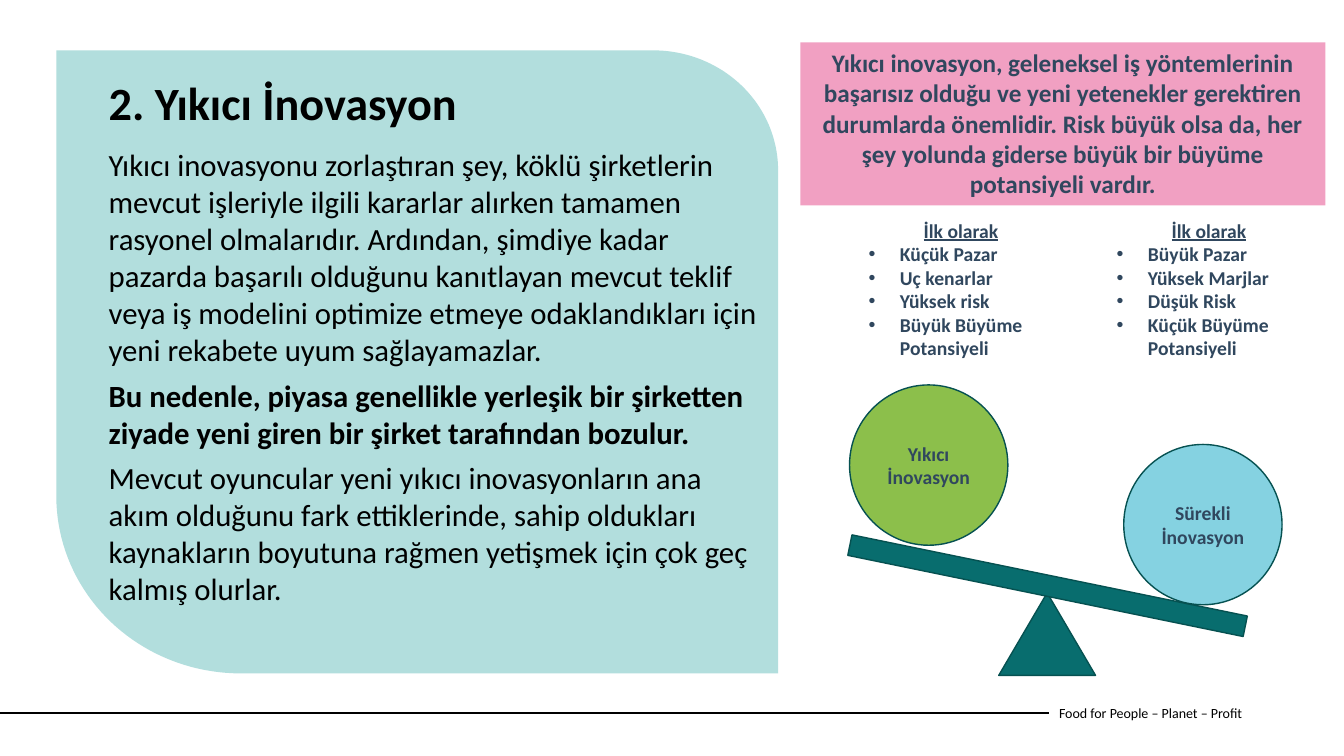
from math import cos, pi, sin

from lxml.etree import SubElement
from pptx import Presentation
from pptx.dml.color import RGBColor
from pptx.enum.shapes import MSO_CONNECTOR as Connector, MSO_SHAPE as Shape
from pptx.enum.text import MSO_ANCHOR as Anchor, PP_ALIGN as Align
from pptx.oxml.ns import qn
from pptx.util import Cm, Pt

FONT = "Calibri"
BLACK, NAVY, TEAL, TEAL_EDGE = "000000", "30475E", "086D6E", "065151"
MINT, PINK, GREEN, SKY = "B2DEDD", "F1A0C2", "8CBF4B", "85D2E1"

TITLE = "2. Yıkıcı İnovasyon"
BODY = [
    ("Yıkıcı inovasyonu zorlaştıran şey, köklü şirketlerin mevcut işleriyle ilgili "
     "kararlar alırken tamamen rasyonel olmalarıdır. Ardından, şimdiye kadar pazarda "
     "başarılı olduğunu kanıtlayan mevcut teklif veya iş modelini optimize etmeye "
     "odaklandıkları için yeni rekabete uyum sağlayamazlar.", False),
    ("Bu nedenle, piyasa genellikle yerleşik bir şirketten ziyade yeni giren bir "
     "şirket tarafından bozulur.", True),
    ("Mevcut oyuncular yeni yıkıcı inovasyonların ana akım olduğunu fark ettiklerinde, "
     "sahip oldukları kaynakların boyutuna rağmen yetişmek için çok geç kalmış "
     "olurlar.", False),
]
CALLOUT = ("Yıkıcı inovasyon, geleneksel iş yöntemlerinin başarısız olduğu ve yeni "
           "yetenekler gerektiren durumlarda önemlidir. Risk büyük olsa da, her şey "
           "yolunda giderse büyük bir büyüme potansiyeli vardır.")
LIST_HEADING = "İlk olarak"
LISTS = [
    (21.64, ["Küçük Pazar", "Uç kenarlar", "Yüksek risk", "Büyük Büyüme Potansiyeli"]),
    (27.89, ["Büyük Pazar", "Yüksek Marjlar", "Düşük Risk", "Küçük Büyüme Potansiyeli"]),
]
BALLS = [
    (21.41, 9.7, GREEN, ["Yıkıcı", "İnovasyon"]),
    (28.32, 11.2, SKY, ["Sürekli İnovasyon"]),
]
FOOTER = "Food for People – Planet – Profit"

PANEL_LEFT, PANEL_TOP, PANEL_RIGHT, PANEL_BOTTOM = 1.42, 1.27, 19.61, 16.97
LOWER_RADII, UPPER_RADII = (4.65, 4.47), (3.15, 3.02)
ARC_STEPS = 40
LIST_INDENT = 0.79
FOOTER_LEFT, FOOTER_RULE_TOP = 26.44, 17.96


def color(code):
    return RGBColor.from_string(code)


def paint(shape, fill, edge=None):
    shape.shadow.inherit = False
    shape.fill.solid()
    shape.fill.fore_color.rgb = color(fill)
    if edge:
        shape.line.color.rgb = color(edge)
        shape.line.width = Pt(1)
    else:
        shape.line.fill.background()


def add_figure(page, kind, place, fill, edge=None):
    shape = page.shapes.add_shape(kind, *map(Cm, place))
    paint(shape, fill, edge)
    return shape


def add_box(page, place, anchor=Anchor.TOP):
    box = page.shapes.add_textbox(*map(Cm, place))
    box.text_frame.word_wrap = True
    box.text_frame.vertical_anchor = anchor
    return box.text_frame


def write(frame, text, size, ink, bold=False, align=Align.LEFT, underline=False):
    para = frame.paragraphs[0]
    if para.runs:
        para = frame.add_paragraph()
    para.alignment = align
    span = para.add_run()
    span.text = text
    span.font.name = FONT
    span.font.size = Pt(size)
    span.font.bold = bold
    span.font.underline = underline
    span.font.color.rgb = color(ink)
    return para


def add_bullet(para):
    props = para._p.get_or_add_pPr()
    props.set("marL", str(Cm(LIST_INDENT)))
    props.set("indent", str(-Cm(LIST_INDENT)))
    SubElement(props, qn("a:buFont")).set("typeface", "Arial")
    SubElement(props, qn("a:buChar")).set("char", "•")


def arc(center, radii, start):
    angles = [start + pi / 2 * step / ARC_STEPS for step in range(ARC_STEPS + 1)]
    return [(Cm(center[0] + radii[0] * cos(angle)), Cm(center[1] + radii[1] * sin(angle)))
            for angle in angles]


def add_panel(page):
    lower = (PANEL_LEFT + LOWER_RADII[0], PANEL_BOTTOM - LOWER_RADII[1])
    upper = (PANEL_RIGHT - UPPER_RADII[0], PANEL_TOP + UPPER_RADII[1])
    outline = (arc(lower, LOWER_RADII, pi / 2)
               + [(Cm(PANEL_LEFT), Cm(PANEL_TOP))]
               + arc(upper, UPPER_RADII, -pi / 2))
    builder = page.shapes.build_freeform(Cm(PANEL_RIGHT), Cm(PANEL_BOTTOM))
    builder.add_line_segments(outline, close=True)
    paint(builder.convert_to_shape(), MINT)


def add_footer(page):
    frame = add_box(page, (FOOTER_LEFT, 17.45, 6.93, 1.02), Anchor.MIDDLE)
    write(frame, FOOTER, 10, BLACK)
    rule = page.shapes.add_connector(Connector.STRAIGHT, 0, Cm(FOOTER_RULE_TOP),
                                     Cm(FOOTER_LEFT), Cm(FOOTER_RULE_TOP))
    rule.line.color.rgb = color(BLACK)
    rule.line.width = Pt(1.5)
    SubElement(rule._element.spPr, qn("a:effectLst"))


def add_story(page):
    title = write(add_box(page, (2.49, 1.9, 13.87, 2.77)), TITLE, 33, BLACK, True)
    title.line_spacing = 0.9
    title.space_before = Pt(10)
    frame = add_box(page, (2.49, 3.56, 17.12, 12.04))
    for text, bold in BODY:
        write(frame, text, 22, BLACK, bold).space_before = Pt(6)


def add_seesaw(page):
    add_figure(page, Shape.ISOSCELES_TRIANGLE, (25.17, 14.94, 2.44, 2.08), TEAL, TEAL_EDGE)
    plank = add_figure(page, Shape.MATH_MINUS, (19.48, 13.64, 13.84, 2.24), TEAL, TEAL_EDGE)
    plank.rotation = 11.6
    for left, top, fill, lines in BALLS:
        ball = add_figure(page, Shape.FLOWCHART_CONNECTOR, (left, top, 3.99, 4.04),
                          fill, TEAL_EDGE)
        ball.text_frame.vertical_anchor = Anchor.MIDDLE
        for line in lines:
            write(ball.text_frame, line, 14, NAVY, True, Align.CENTER)


def add_lists(page):
    for left, items in LISTS:
        frame = add_box(page, (left, 5.38, 5.16, 3.84))
        write(frame, LIST_HEADING, 14, NAVY, True, Align.CENTER, True)
        for item in items:
            add_bullet(write(frame, item, 14, NAVY, True))


def main():
    deck = Presentation()
    deck.slide_width, deck.slide_height = Cm(33.87), Cm(19.05)
    page = deck.slides.add_slide(deck.slide_layouts[6])
    add_footer(page)
    add_panel(page)
    add_story(page)
    add_seesaw(page)
    add_lists(page)
    callout = add_figure(page, Shape.RECTANGLE, (20.17, 1.07, 13.23, 4.11), PINK)
    callout.text_frame.vertical_anchor = Anchor.TOP
    write(callout.text_frame, CALLOUT, 18, NAVY, True, Align.CENTER)
    deck.save("out.pptx")


if __name__ == "__main__":
    main()
